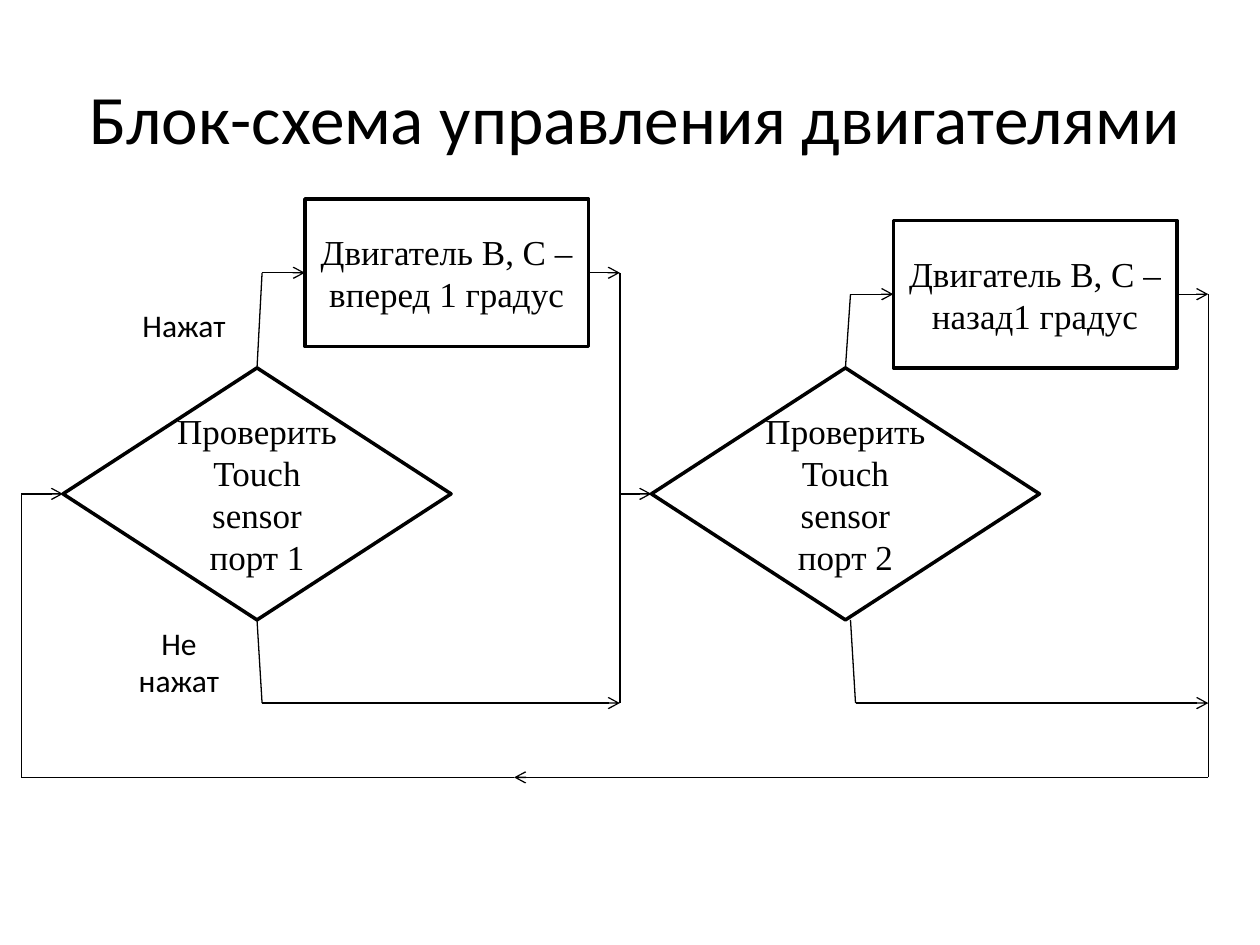
from dataclasses import dataclass

import pptx
import pptx.dml.color
import pptx.enum.shapes
import pptx.enum.text
import pptx.oxml
import pptx.oxml.ns
import pptx.util
from lxml import etree

Inches = pptx.util.Inches
Pt = pptx.util.Pt
RGB = pptx.dml.color.RGBColor
SHAPE = pptx.enum.shapes.MSO_SHAPE
qn = pptx.oxml.ns.qn


@dataclass(frozen=True)
class Theme:
    ink: RGB = RGB(0, 0, 0)
    paper: RGB = RGB(255, 255, 255)
    heading_font: str = "Calibri"
    block_font: str = "Times New Roman"
    title_size: float = 39.6
    block_size: float = 20
    label_size: float = 18
    outline: float = 2
    flow: float = 0.75


THEME = Theme()
MIDDLE_Y, JOIN_Y, RETURN_Y = 3.92, 5.58, 6.17
RETURN_X, RETURN_ARROW_X = 0.17, 4.08
DECISION_W, DECISION_H = 3.08, 2
ACTION_W, ACTION_H = 2.25, 1.17


def write_text(sp, text, *, size, font):
    tf = sp.text_frame
    tf.word_wrap = True
    tf.vertical_anchor = pptx.enum.text.MSO_ANCHOR.MIDDLE
    for i, line in enumerate(text.split("\n")):
        p = tf.paragraphs[0] if i == 0 else tf.add_paragraph()
        p.alignment = pptx.enum.text.PP_ALIGN.CENTER
        r = p.add_run()
        r.text = line
        r.font.size = Pt(size)
        r.font.name = font
        r.font.color.rgb = THEME.ink


def add_title(s, text):
    sp = s.shapes.title
    sp.left, sp.top = Inches(0.25), Inches(0.3)
    sp.width, sp.height = Inches(9.58), Inches(1.25)
    write_text(sp, text, size=THEME.title_size, font=THEME.heading_font)


def add_box(s, kind, x, y, w, h):
    sp = s.shapes.add_shape(kind, Inches(x), Inches(y), Inches(w), Inches(h))
    sp.shadow.inherit = False
    sp.fill.solid()
    sp.fill.fore_color.rgb = THEME.paper
    return sp


def add_block(s, kind, x, y, w, h, text):
    sp = add_box(s, kind, x, y, w, h)
    sp.line.color.rgb = THEME.ink
    sp.line.width = Pt(THEME.outline)
    write_text(sp, text, size=THEME.block_size, font=THEME.block_font)


def add_label(s, x, y, w, text):
    sp = add_box(s, SHAPE.RECTANGLE, x, y, w, 0.5)
    sp.line.fill.background()
    write_text(sp, text, size=THEME.label_size, font=THEME.heading_font)


def add_line(s, start, end, arrow=False):
    ends = [Inches(v) for v in (*start, *end)]
    sp = s.shapes.add_connector(pptx.enum.shapes.MSO_CONNECTOR.STRAIGHT, *ends)
    sp.line.color.rgb = THEME.ink
    sp.line.width = Pt(THEME.flow)
    if arrow:
        etree.SubElement(sp.line._get_or_add_ln(), qn("a:tailEnd"), type="arrow")
    etree.SubElement(sp._element.spPr, qn("a:effectLst"))


def add_path(s, *points):
    last = len(points) - 2
    for i, (start, end) in enumerate(zip(points, points[1:])):
        add_line(s, start, end, arrow=i == last)


def add_check(s, x, action_y, exit_shift, bottom_y, check, action):
    tip_x = x + DECISION_W / 2
    turn_x = tip_x + 0.04
    action_x = x + 1.92
    action_mid = action_y + ACTION_H / 2
    join_x = x + 4.42
    top, bottom = MIDDLE_Y - DECISION_H / 2, MIDDLE_Y + DECISION_H / 2

    add_block(s, SHAPE.FLOWCHART_DECISION, x, top, DECISION_W, DECISION_H, check)
    add_path(s, (tip_x, top), (turn_x, action_mid), (action_x, action_mid))
    add_block(s, SHAPE.RECTANGLE, action_x, action_y, ACTION_W, ACTION_H, action)
    add_path(s, (action_x + ACTION_W, action_mid), (join_x, action_mid))
    add_path(s, (tip_x + exit_shift, bottom), (turn_x + exit_shift, JOIN_Y),
             (join_x, JOIN_Y))
    add_line(s, (join_x, action_mid), (join_x, bottom_y))
    return join_x


def main():
    prs = pptx.Presentation()
    prs.slide_width, prs.slide_height = Inches(10), Inches(7.5)
    s = prs.slides.add_slide(prs.slide_layouts[5])
    add_title(s, "Блок-схема управления двигателями")
    add_label(s, 1, 2.33, 0.92, "Нажат")
    add_label(s, 0.92, 5, 1, "Не нажат")

    first_x, second_x = 0.5, 5.17
    first_join = add_check(s, first_x, 1.58, 0, JOIN_Y,
                           "Проверить Touch sensor\nпорт 1",
                           "Двигатель B, С – вперед 1 градус")
    second_join = add_check(s, second_x, 1.75, 0.04, RETURN_Y,
                            "Проверить Touch sensor\nпорт 2",
                            "Двигатель B, С – назад1 градус")

    add_path(s, (first_join, MIDDLE_Y), (second_x, MIDDLE_Y))
    add_path(s, (second_join, RETURN_Y), (RETURN_ARROW_X, RETURN_Y))
    add_path(s, (RETURN_ARROW_X, RETURN_Y), (RETURN_X, RETURN_Y),
             (RETURN_X, MIDDLE_Y), (first_x, MIDDLE_Y))
    prs.save("out.pptx")


if __name__ == "__main__":
    main()
